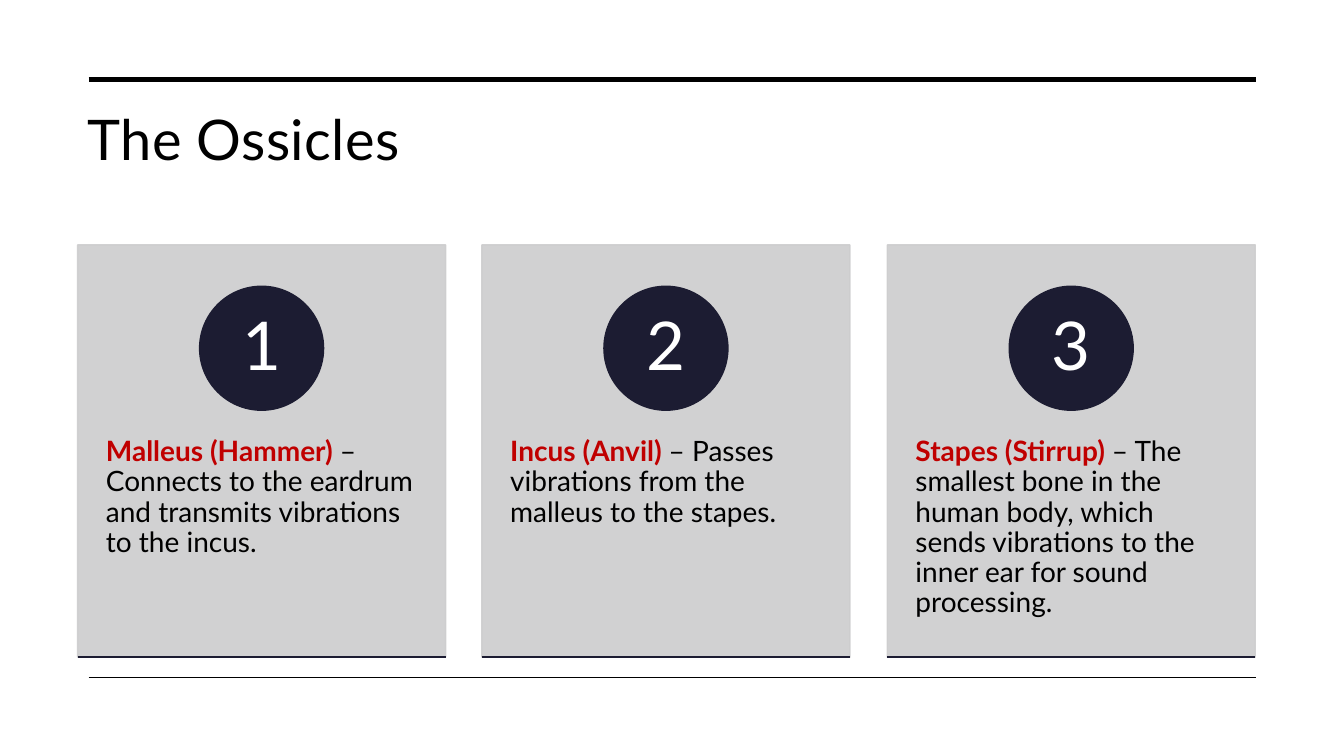
from lxml.etree import SubElement
from pptx import Presentation
from pptx.dml.color import RGBColor
from pptx.enum.shapes import MSO_CONNECTOR, MSO_SHAPE
from pptx.enum.text import MSO_ANCHOR, PP_ALIGN
from pptx.oxml.ns import qn
from pptx.util import Emu, Pt

SCALE = 9144  # EMU per px, 100 px to the inch
COLORS = {"black": "000000", "white": "FFFFFF", "navy": "1C1C32",
          "gray": "CDCDCE", "red": "C00000"}
BONES = [
    ("Malleus (Hammer) ",
     "– Connects to the eardrum and transmits vibrations to the incus."),
    ("Incus (Anvil) ",
     "– Passes vibrations from the malleus to the stapes."),
    ("Stapes (Stirrup) ",
     "– The smallest bone in the human body, which sends vibrations "
     "to the inner ear for sound processing."),
]


def px(*sizes):
    return [Emu(size * SCALE) for size in sizes]


class Board:
    font = "Lato"

    def __init__(self, slide):
        self.shapes = slide.shapes

    def color(self, name):
        return RGBColor.from_string(COLORS[name])

    def line(self, left, right, y, width, color="black"):
        rule = self.shapes.add_connector(
            MSO_CONNECTOR.STRAIGHT, *px(left, y, right, y))
        rule.line.width = Pt(width)
        rule.line.color.rgb = self.color(color)
        SubElement(rule._element.spPr, qn("a:effectLst"))

    def shape(self, kind, box, color, alpha=100):
        form = self.shapes.add_shape(kind, *px(*box))
        form.shadow.inherit = False
        form.fill.solid()
        form.fill.fore_color.rgb = self.color(color)
        form.line.color.rgb = self.color(color)
        form.line.width = Pt(1)
        if alpha < 100:
            for tint in form._element.spPr.iter(qn("a:srgbClr")):
                SubElement(tint, qn("a:alpha"), val=str(alpha * 1000))

    def text(self, box, runs, size, inset, center=False, lead=1.0, track=0):
        """Each run is (words, color, bold); inset is (side, top)."""
        frame = self.shapes.add_textbox(*px(*box)).text_frame
        frame.word_wrap = True
        side, top = px(*inset)
        frame.margin_left = frame.margin_right = side
        frame.margin_top = frame.margin_bottom = top
        frame.vertical_anchor = MSO_ANCHOR.MIDDLE if center else MSO_ANCHOR.TOP
        para = frame.paragraphs[0]
        para.alignment = PP_ALIGN.CENTER if center else PP_ALIGN.LEFT
        para.line_spacing = lead
        for words, color, bold in runs:
            run = para.add_run()
            run.text = words
            run.font.name = self.font
            run.font.size = Pt(size)
            run.font.bold = bold
            run.font.color.rgb = self.color(color)
            if track:
                run._r.get_or_add_rPr().set("spc", str(track))

    def card(self, left, number, name, role):
        top, width, height = 243, 365, 409
        disc, label = 123, 87
        self.shape(MSO_SHAPE.RECTANGLE, (left, top, width, height), "gray", 90)
        self.text((left, top + 155, width, 245),
                  [(name, "red", True), (role, "black", False)],
                  20, (28, 36), lead=0.9)
        # Numbered disc
        self.shape(MSO_SHAPE.OVAL,
                   (left + (width - disc) // 2, top + 41, disc, disc), "navy")
        self.text((left + (width - label) // 2, top + 59, label, label),
                  [(str(number), "white", False)],
                  48, (10, 1), center=True, lead=0.9)
        # Bottom edge
        self.line(left, left + width, top + height, 1, "navy")


def main():
    deck = Presentation()
    deck.slide_width, deck.slide_height = px(1333, 750)
    board = Board(deck.slides.add_slide(deck.slide_layouts[6]))

    # Title and rules
    board.text((77, 99, 1169, 126), [("The Ossicles", "black", False)],
               40, (10, 5), track=30)
    board.line(88, 1246, 79, 3.5)
    board.line(88, 1246, 672, 1)

    # One card per bone, evenly spread
    first, last = 77, 880
    for i, (name, role) in enumerate(BONES):
        left = first + i * (last - first) // (len(BONES) - 1)
        board.card(left, i + 1, name, role)

    deck.save("out.pptx")


if __name__ == "__main__":
    main()
